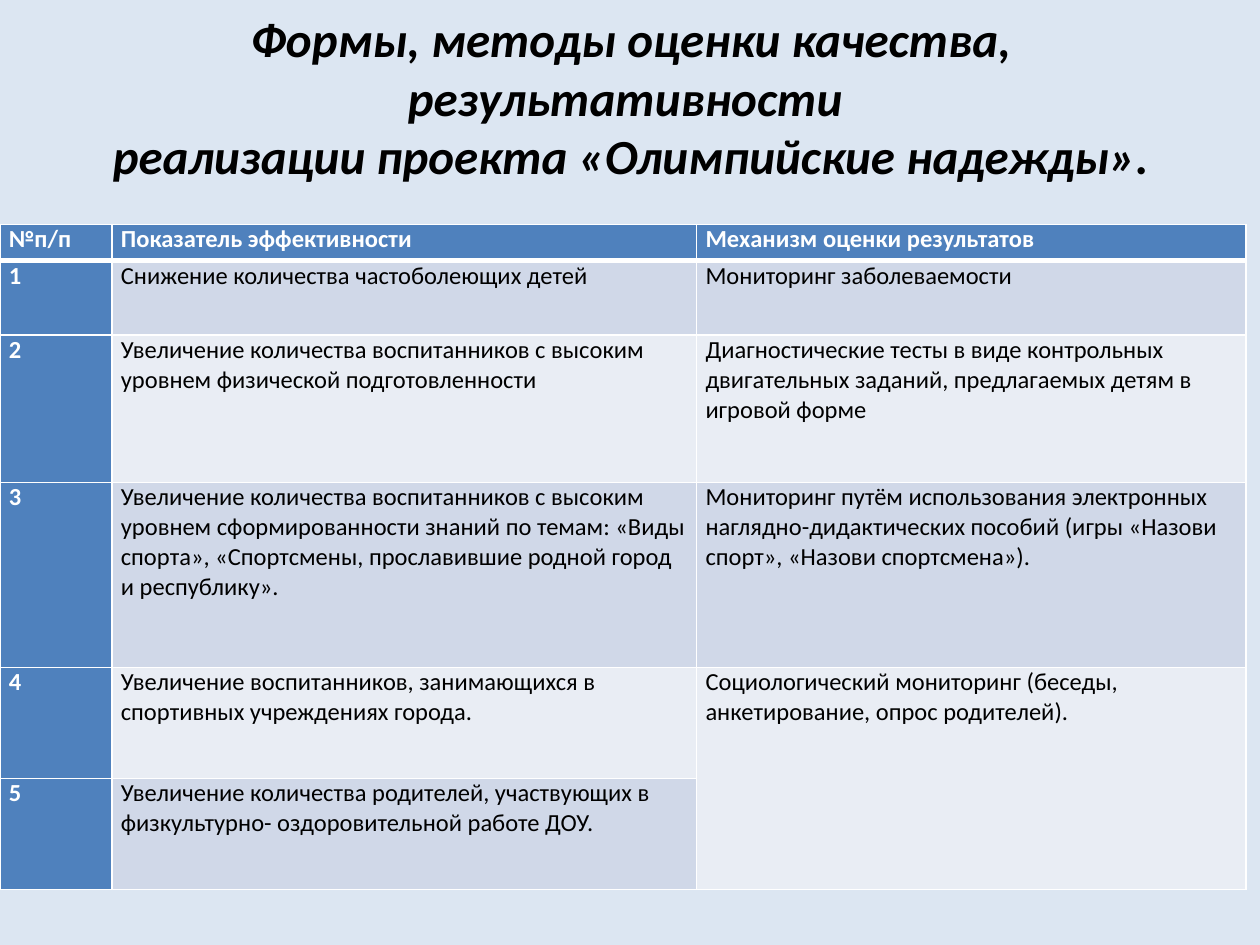
from lxml.etree import SubElement
from pptx import Presentation
from pptx.dml.color import RGBColor
from pptx.enum.text import MSO_ANCHOR, PP_ALIGN
from pptx.oxml.ns import qn
from pptx.util import Inches, Pt

FONT = "Calibri"
WHITE, BLACK, BLUE = "FFFFFF", "000000", "4F81BD"
BANDS = ("D0D8E8", "E9EDF4")
TITLE = ("Формы, методы оценки качества, результативности \v"
         "реализации проекта «Олимпийские надежды».\v")
COLUMN_WIDTHS = (0.89, 4.64, 4.36)
ROW_HEIGHTS = (0.29, 0.59, 1.17, 1.47, 0.88, 0.88)
ROWS = (
    ("№п/п", "Показатель эффективности", "Механизм оценки результатов"),
    ("1", "Снижение количества частоболеющих детей", "Мониторинг заболеваемости"),
    ("2", "Увеличение количества воспитанников с высоким уровнем физической подготовленности",
     "Диагностические тесты в виде контрольных двигательных заданий, "
     "предлагаемых детям в игровой форме"),
    ("3", "Увеличение количества воспитанников с высоким уровнем сформированности знаний "
     "по темам: «Виды спорта», «Спортсмены, прославившие родной город и республику».",
     "Мониторинг путём использования электронных наглядно-дидактических пособий "
     "(игры «Назови спорт», «Назови спортсмена»)."),
    ("4", "Увеличение воспитанников, занимающихся в спортивных учреждениях города.",
     "Социологический мониторинг (беседы, анкетирование, опрос родителей)."),
    ("5", "Увеличение количества родителей, участвующих в физкультурно- "
     "оздоровительной работе ДОУ.", ""),
)


def color(value):
    """Return the colour for a hex string."""
    return RGBColor.from_string(value)


def set_font(paragraph, size, value, bold, italic=False):
    """Apply one font to a whole paragraph."""
    font = paragraph.font
    font.name, font.size = FONT, Pt(size)
    font.bold, font.italic = bold, italic
    font.color.rgb = color(value)


def set_borders(cell, top=1, bottom=1):
    """Draw white borders, which come before the fill in the cell properties."""
    properties = cell._tc.get_or_add_tcPr()
    widths = {"lnL": 1, "lnR": 1, "lnT": top, "lnB": bottom}
    for tag, width in widths.items():
        line = SubElement(properties, qn(f"a:{tag}"), w=str(Pt(width)))
        fill = SubElement(line, qn("a:solidFill"))
        SubElement(fill, qn("a:srgbClr"), val=WHITE)


def add_title(slide, left, top, width, height):
    """Place the centred slide title in its box."""
    frame = slide.shapes.add_textbox(left, top, width, height).text_frame
    frame.word_wrap = True
    frame.vertical_anchor = MSO_ANCHOR.MIDDLE
    paragraph = frame.paragraphs[0]
    paragraph.text = TITLE
    paragraph.alignment = PP_ALIGN.CENTER
    set_font(paragraph, 28, BLACK, bold=True, italic=True)


def fill_cell(cell, text, row, column):
    """Write and style one cell according to its place in the grid."""
    heading = row == 0 or column == 0
    cell.margin_left = cell.margin_right = Inches(0.07)
    cell.margin_top = cell.margin_bottom = 0
    set_borders(cell, top=3 if row == 1 else 1, bottom=3 if row == 0 else 1)
    cell.fill.solid()
    cell.fill.fore_color.rgb = color(BLUE if heading else BANDS[(row - 1) % 2])
    paragraph = cell.text_frame.paragraphs[0]
    paragraph.text = text
    justified = column == 0 or (row == 0 and column == 1)
    paragraph.alignment = PP_ALIGN.JUSTIFY if justified else PP_ALIGN.LEFT
    set_font(paragraph, 14, WHITE if heading else BLACK, bold=heading)


def add_indicator_table(slide, left, top, width, height):
    """Place the table of indicators and assessment methods."""
    table = slide.shapes.add_table(
        len(ROWS), len(COLUMN_WIDTHS), left, top, width, height).table
    for column, column_width in zip(table.columns, COLUMN_WIDTHS):
        column.width = Inches(column_width)
    for row, row_height in zip(table.rows, ROW_HEIGHTS):
        row.height = Inches(row_height)
    for row, texts in enumerate(ROWS):
        for column, text in enumerate(texts):
            fill_cell(table.cell(row, column), text, row, column)
    table.cell(4, 2).merge(table.cell(5, 2))


def main():
    """Build and save the presentation."""
    presentation = Presentation()
    presentation.slide_width, presentation.slide_height = Inches(10), Inches(7.5)
    slide = presentation.slides.add_slide(presentation.slide_layouts[6])
    slide.background.fill.solid()
    slide.background.fill.fore_color.rgb = color("DCE6F2")
    add_title(slide, Inches(0.2), Inches(0.3), Inches(9.61), Inches(1.4))
    add_indicator_table(slide, 0, Inches(1.78), Inches(9.88), Inches(5.28))
    presentation.save("out.pptx")


if __name__ == "__main__":
    main()
